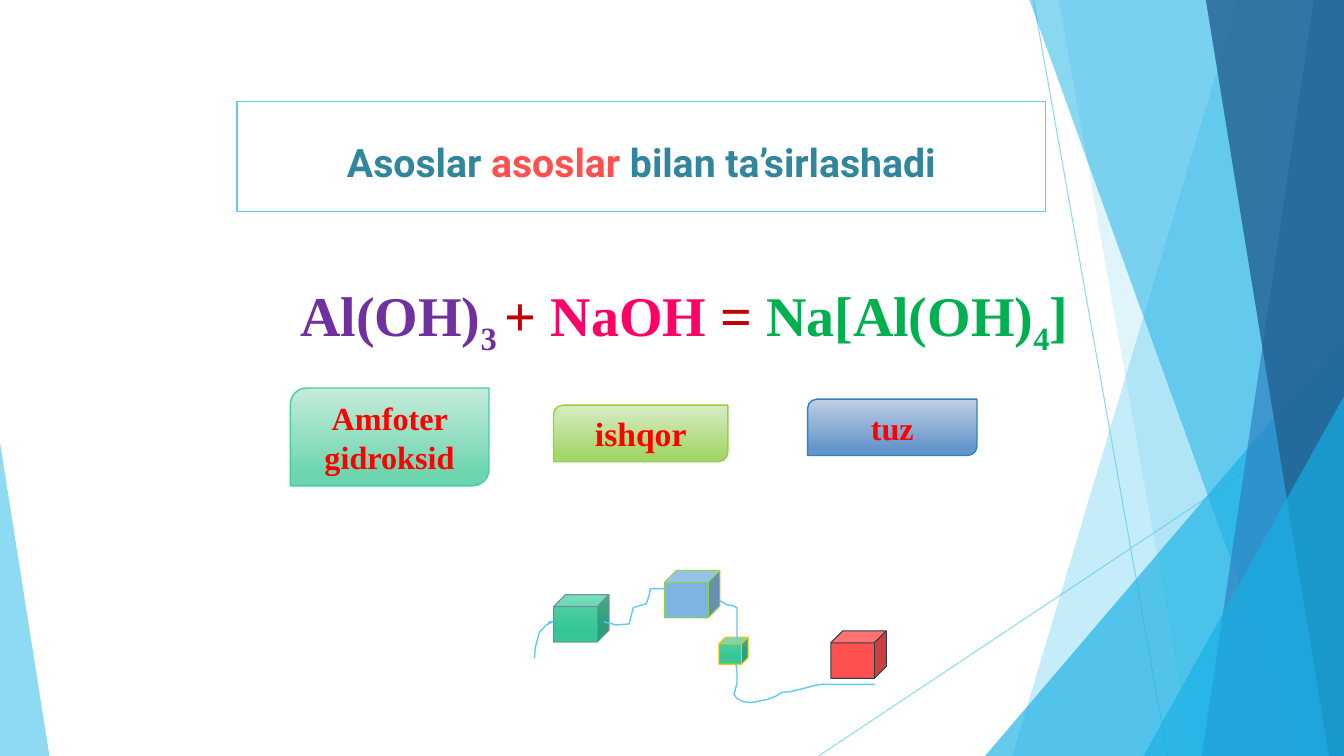
from dataclasses import dataclass

from lxml import etree
from pptx import Presentation
from pptx.dml.color import RGBColor
from pptx.enum import shapes, text
from pptx.oxml import ns
from pptx.util import Inches, Pt


@dataclass(frozen=True)
class Theme:
    sky: str = "5FCBEF"
    cyan: str = "17B0E4"
    blue: str = "2E83C3"
    navy: str = "226292"
    white: str = "FFFFFF"
    teal: str = "31859C"
    coral: str = "FF5050"
    red: str = "FF0000"
    crimson: str = "C00000"
    purple: str = "7030A0"
    pink: str = "FF0066"
    leaf: str = "00B050"
    lime: str = "96D141"
    mint: str = "42D0A2"
    heading_font: str = "Roboto"
    body_font: str = "Times New Roman"
    heading_size: int = 28
    equation_size: int = 40
    label_size: int = 23
    outline: float = 1
    hairline: float = 0.75


@dataclass(frozen=True)
class Box:
    left: float
    top: float
    width: float
    height: float

    def inner(self, x, y, width, height):
        return Box(self.left + x, self.top + y, width, height)

    def point(self, x, y):
        return Inches(self.left + x), Inches(self.top + y)

    def emu(self):
        return [Inches(v) for v in (self.left, self.top, self.width, self.height)]


THEME = Theme()
GREEN_SHADE = ("56D2A7", "36C596", 0.78)


def rgb(colour):
    return RGBColor.from_string(colour)


def set_opacity(owner, percent):
    """Make the first solid colour inside an XML element translucent."""
    colour = owner.find(".//" + ns.qn("a:srgbClr"))
    etree.SubElement(colour, ns.qn("a:alpha")).set("val", str(percent * 1000))


def paint(shape, fill=None, line=None, width=THEME.outline):
    """Fill with one colour or a (top, bottom, end position) gradient."""
    shape.shadow.inherit = False
    if fill is None:
        shape.fill.background()
    elif isinstance(fill, tuple):
        top, bottom, end = fill
        shape.fill.gradient()
        shape.fill.gradient_angle = 270
        for stop, colour, position in zip(shape.fill.gradient_stops, (top, bottom), (0, end)):
            stop.color.rgb = rgb(colour)
            stop.position = position
    else:
        shape.fill.solid()
        shape.fill.fore_color.rgb = rgb(fill)
    if line is None:
        shape.line.fill.background()
    else:
        shape.line.color.rgb = rgb(line)
        shape.line.width = Pt(width)


def style(paragraph, font, size):
    paragraph.font.name = font
    paragraph.font.size = Pt(size)
    paragraph.font.bold = True


def add_path(slide, points, close):
    builder = slide.shapes.build_freeform(*points[0], scale=1.0)
    builder.add_line_segments(points[1:], close=close)
    return builder.convert_to_shape()


def draw_backdrop(slide, box):
    """Translucent facets down the right edge and a wedge at the lower left."""

    def ray(start, end):
        line = slide.shapes.add_connector(
            shapes.MSO_CONNECTOR.STRAIGHT, *box.point(*start), *box.point(*end))
        line.line.color.rgb = rgb(THEME.sky)
        line.line.width = Pt(THEME.hairline)
        set_opacity(line.line._get_or_add_ln(), 70)
        etree.SubElement(line._element.spPr, ns.qn("a:effectLst"))

    def facet(top_inset, bottom_inset, colour, opacity):
        right, bottom = box.width, box.height
        corners = [(right - top_inset, 0), (right, 0), (right, bottom),
                   (right - bottom_inset, bottom)]
        shape = add_path(slide, [box.point(*corner) for corner in corners], True)
        paint(shape, colour)
        set_opacity(shape._element.spPr, opacity)

    def wedge(width, height, colour, opacity, on_right=True):
        x = box.width - width if on_right else 0
        place = box.inner(x, box.height - height, width, height)
        shape = slide.shapes.add_shape(shapes.MSO_SHAPE.ISOSCELES_TRIANGLE, *place.emu())
        shape.adjustments[0] = 1 if on_right else 0
        paint(shape, colour)
        set_opacity(shape._element.spPr, opacity)

    ray((10.25, 0), (11.58, box.height))
    ray((box.width, 4.03), (8.12, box.height))
    facet(1.05, 3.29, THEME.sky, 36)
    facet(2.83, 1.5, THEME.sky, 20)
    wedge(3.56, 4.17, THEME.cyan, 66)
    facet(3.12, 0.42, THEME.cyan, 50)
    facet(0.3, 1.41, THEME.blue, 70)
    facet(1.37, 0.15, THEME.navy, 80)
    wedge(1.99, 3.57, THEME.cyan, 66)
    wedge(0.49, 3.11, THEME.sky, 70, on_right=False)


def draw_title(slide, box):
    title = slide.shapes.title
    title.left, title.top, title.width, title.height = box.emu()
    properties = title._element.spPr
    outline = etree.Element(ns.qn("a:prstGeom"), prst="round2DiagRect")
    etree.SubElement(outline, ns.qn("a:avLst"))
    properties.insert(1, outline)
    paint(title, THEME.white, THEME.sky)
    frame = title.text_frame
    frame.auto_size = text.MSO_AUTO_SIZE.NONE
    frame.vertical_anchor = text.MSO_ANCHOR.MIDDLE
    frame.margin_top = Inches(0.15)
    heading = frame.paragraphs[0]
    heading.alignment = text.PP_ALIGN.CENTER
    style(heading, THEME.heading_font, THEME.heading_size)
    for words, colour in (("Asoslar ", THEME.teal), ("asoslar ", THEME.coral),
                          ("bilan ta’sirlashadi", THEME.teal)):
        run = heading.add_run()
        run.text = words
        run.font.color.rgb = rgb(colour)


def draw_reaction(slide, box):
    """The equation with a label under each substance."""
    equation_box = slide.shapes.add_textbox(*box.inner(0, 0, box.width, 0.77).emu())
    equation_box.text_frame.word_wrap = False
    equation = equation_box.text_frame.paragraphs[0]
    style(equation, THEME.body_font, THEME.equation_size)
    for symbols, colour, subscript in (
            ("Al(OH)", THEME.purple, False), ("3 ", THEME.purple, True),
            ("+ ", THEME.crimson, False), ("NaOH", THEME.pink, False),
            (" = ", THEME.crimson, False), ("Na[Al(OH)", THEME.leaf, False),
            ("4", THEME.leaf, True), ("]", THEME.leaf, False)):
        run = equation.add_run()
        run.text = symbols
        run.font.color.rgb = rgb(colour)
        if subscript:
            run._r.get_or_add_rPr().set("baseline", "-25000")

    for words, place, shade, line, size in (
            ("Amfoter gidroksid", (0, 1.12, 1.97, 0.97), ("C5ECDB", "6DD5AE", 0.88),
             THEME.mint, THEME.label_size),
            ("tuz", (5.13, 1.23, 1.68, 0.56), ("BFCFE5", "6596CA", 0.88),
             THEME.blue, THEME.label_size),
            ("ishqor", (2.61, 1.29, 1.73, 0.56), ("D8ECC5", "A5D66C", 0.88),
             THEME.lime, THEME.label_size + 1)):
        label = slide.shapes.add_shape(
            shapes.MSO_SHAPE.ROUND_2_DIAG_RECTANGLE, *box.inner(*place).emu())
        paint(label, shade, line)
        label.text_frame.word_wrap = True
        substance = label.text_frame.paragraphs[0]
        substance.text = words
        substance.alignment = text.PP_ALIGN.CENTER
        style(substance, THEME.body_font, size)
        substance.font.color.rgb = rgb(THEME.red)


def draw_cube_chain(slide, box):
    """Cubes strung on loose threads."""
    large, small = (0.55, 0.47), (0.29, 0.27)
    for corner, size, fill, line in (
            ((0.19, 0.24), large, GREEN_SHADE, "6E91A0"),
            ((1.29, 0), large, "7CB5E0", THEME.lime),
            ((1.83, 0.66), small, GREEN_SHADE, "FFC000"),
            ((2.94, 0.6), large, THEME.coral, "2C3C43")):
        cube = slide.shapes.add_shape(
            shapes.MSO_SHAPE.CUBE, *box.inner(*corner, *size).emu())
        paint(cube, fill, line, THEME.hairline)

    for thread in (
            [(0, 0.87), (0.01, 0.76), (0.04, 0.65), (0.05, 0.61), (0.12, 0.54),
             (0.18, 0.51), (0.14, 0.51)],
            [(0.69, 0.51), (0.77, 0.53), (0.81, 0.54), (0.94, 0.53), (0.97, 0.41),
             (0.98, 0.37), (1.07, 0.34), (1.11, 0.33), (1.14, 0.24), (1.15, 0.18),
             (1.31, 0.18)],
            [(1.84, 0.3), (1.91, 0.34), (1.97, 0.35), (2.01, 0.37), (2.01, 0.68)],
            [(2, 0.93), (2.01, 1), (2.01, 1.12), (1.98, 1.23), (2.01, 1.27),
             (2.07, 1.3), (2.15, 1.31), (2.31, 1.28), (2.41, 1.24), (2.45, 1.21),
             (2.55, 1.2), (2.67, 1.17), (2.78, 1.14), (2.84, 1.13), (3.38, 1.13)]):
        paint(add_path(slide, [box.point(*bend) for bend in thread], False),
              line=THEME.sky)


def main():
    deck = Presentation()
    page = Box(0, 0, 13.33, 7.5)
    deck.slide_width, deck.slide_height = Inches(page.width), Inches(page.height)
    slide = deck.slides.add_slide(deck.slide_layouts.get_by_name("Title Only"))
    draw_backdrop(slide, page)
    draw_title(slide, page.inner(2.35, 1.01, 8.02, 1.09))
    draw_reaction(slide, page.inner(2.88, 2.73, 7.97, 2.09))
    draw_cube_chain(slide, page.inner(5.3, 5.66, 3.49, 1.31))
    deck.save("out.pptx")


if __name__ == "__main__":
    main()
